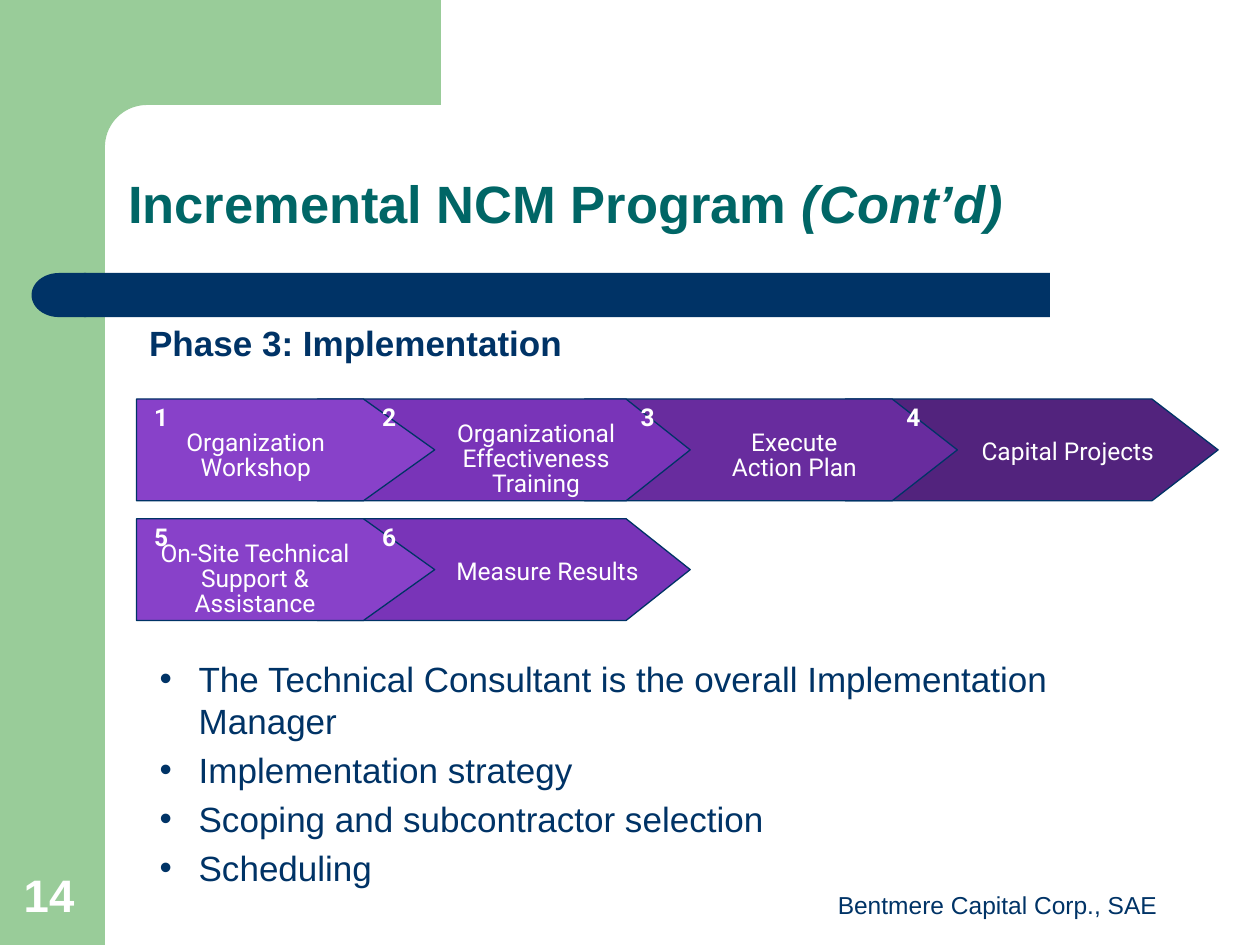
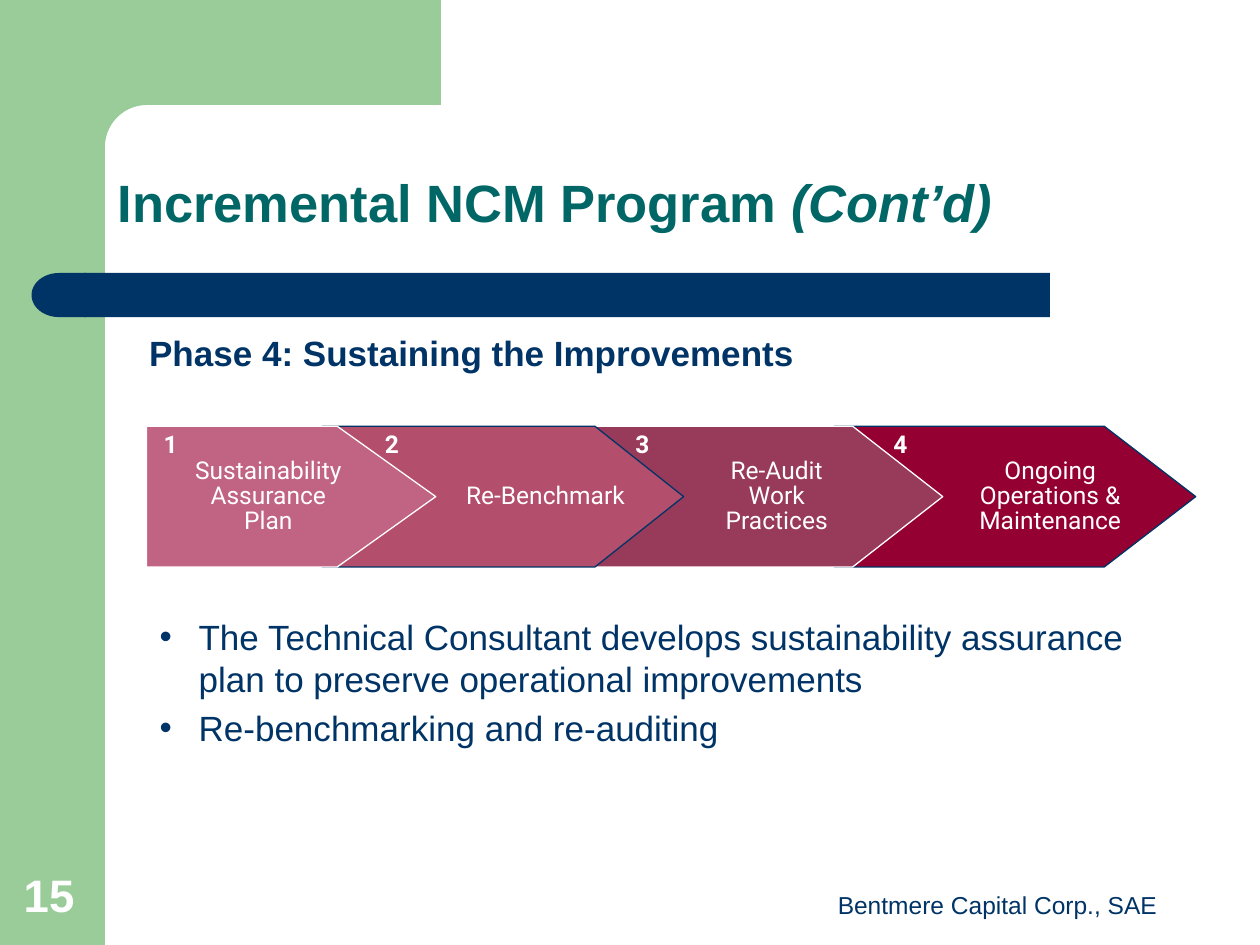
"""Build two programme slides with numbered arrow flows and bullet lists."""
from dataclasses import dataclass
from math import cos, radians, sin

from pptx import Presentation
from pptx.dml.color import RGBColor
from pptx.enum.shapes import MSO_SHAPE
from pptx.enum.text import MSO_ANCHOR, MSO_AUTO_SIZE, PP_ALIGN
from pptx.oxml import parse_xml
from pptx.oxml.ns import nsdecls
from pptx.util import Inches, Pt


@dataclass(frozen=True)
class Theme:
    green: str = "99CC99"
    navy: str = "003366"
    teal: str = "006666"
    white: str = "FFFFFF"
    body_font: str = "Arial"
    flow_font: str = "Roboto"
    title_size: int = 30
    body_size: int = 20
    label_size: int = 14
    number_size: int = 26
    outline: float = 0.75


theme = Theme()
presentation = Presentation()
presentation.slide_width, presentation.slide_height = Inches(10), Inches(7.5)
COLUMN = presentation.slide_width / 120
ROW = presentation.slide_height / 90


def grid(left, top, width, height):
    return [round(value) for value in (left * COLUMN, top * ROW, width * COLUMN, height * ROW)]


def style(shape, color, size, font=theme.body_font, bold=False,
          align=PP_ALIGN.LEFT, anchor=MSO_ANCHOR.TOP, spacing=None):
    text_frame = shape.text_frame
    text_frame.word_wrap = True
    text_frame.auto_size = MSO_AUTO_SIZE.NONE
    text_frame.vertical_anchor = anchor
    for paragraph in text_frame.paragraphs:
        paragraph.alignment = align
        paragraph.line_spacing = spacing
        for run in paragraph.runs:
            run.font.name, run.font.size, run.font.bold = font, Pt(size), bold
            run.font.color.rgb = RGBColor.from_string(color)


FOOTER = "Bentmere Capital Corp., SAE"
ARROW_OFFSETS = [0, 17.24, 42.68, 67.52]
ARROW_WIDTHS = [28.4, 35.5, 35.5, 35.5]
ARROW_POINTS = [0.7, 0.63, 0.64, 0.65]
NUMBER_OFFSETS = [1.68, 23.4, 48, 73.32]
PURPLES = ["8841C9", "7934B8", "682C9E", "52237D"]
REDS = ["C16382", "B34F6D", "983A59", "940031"]

slides = [
    {
        "number": "14",
        "title_box": (11, 12.6, 104.3, 10.4),
        "phase": "Phase 3: Implementation",
        "phase_box": (13, 30, 98.4, 9),
        "list_box": (14, 62, 97.5, 23),
        "bullets": ["The Technical Consultant is the overall Implementation Manager",
                    "Implementation strategy",
                    "Scoping and subcontractor selection",
                    "Scheduling"],
        "left": 13, "scale": 1, "height": 9.7, "line_height": 1.72,
        "fills": PURPLES, "outlines": [theme.navy] * 4,
        "flows": [
            (38, 1, [("Organization\nWorkshop", 24.36, 15.36),
                     ("Organizational\nEffectiveness\nTraining", 51.06, 17.4),
                     ("Execute\nAction Plan", 75.66, 13.56),
                     ("Capital Projects", 101.7, 18.84)]),
            (49.4, 5, [("On-Site Technical\nSupport &\nAssistance", 24.3, 21.24),
                       ("Measure Results", 52.14, 19.8)]),
        ],
    },
    {
        "number": "15",
        "title_box": (10, 13.5, 104.3, 9.4),
        "phase": "Phase 4: Sustaining the Improvements",
        "phase_box": (13, 31, 104.3, 8),
        "list_box": (14, 58, 97.5, 23),
        "bullets": ["The Technical Consultant develops sustainability assurance plan "
                    "to preserve operational improvements",
                    "Re-benchmarking and re-auditing"],
        "left": 13.95, "scale": 0.97, "height": 13.4, "line_height": 2.36,
        "fills": REDS, "outlines": [theme.white, theme.navy] * 2,
        "flows": [
            (40.6, 1, [("Sustainability\nAssurance\nPlan", 25.56, 15.6),
                       ("Re-Benchmark", 51.96, 17.28),
                       ("Re-Audit\nWork\nPractices", 73.98, 10.44),
                       ("Ongoing\nOperations &\nMaintenance", 100.02, 15.48)]),
        ],
    },
]

layout = presentation.slide_layouts.get_by_name("Two Content")
pages = [presentation.slides.add_slide(layout) for content in slides]

shapes = pages[0].shapes
side_band = shapes.add_shape(MSO_SHAPE.RECTANGLE, *grid(0, 0, 10, 90))
corner_points = [(42, 10)]
corner_points += [(14 + 4 * cos(radians(angle)), 14 - 4 * sin(radians(angle)))
                  for angle in range(90, 181, 5)]
corner_points += [(10, 15.36), (6, 15.36), (6, 0)]
builder = shapes.build_freeform(round(42 * COLUMN), 0)
builder.add_line_segments([(x * COLUMN, y * ROW) for x, y in corner_points])
corner = builder.convert_to_shape()
title_bar = shapes.add_shape(MSO_SHAPE.RECTANGLE, *grid(8, 26, 92, 4.2))
bar_end = shapes.add_shape(MSO_SHAPE.FLOWCHART_DELAY, *grid(3, 26, 5.2, 4.2))
bar_end.rotation = 180
decorations = [(side_band, theme.green), (corner, theme.green),
               (title_bar, theme.navy), (bar_end, theme.navy)]
for index, (shape, color) in enumerate(decorations):
    shape.shadow.inherit = False
    shape.fill.solid()
    shape.fill.fore_color.rgb = RGBColor.from_string(color)
    shape.line.fill.background()
    shape.element.nvSpPr.cNvPr.set("id", str(20 + index))
    layout.shapes.element.insert(2 + index, shape.element)

for slide, content in zip(pages, slides):
    title, phase, bullets = slide.placeholders
    for shape, name in ((title, "title_box"), (phase, "phase_box"), (bullets, "list_box")):
        shape.left, shape.top, shape.width, shape.height = grid(*content[name])

    paragraph = title.text_frame.paragraphs[0]
    paragraph.text = "Incremental NCM Program "
    continued = paragraph.add_run()
    continued.text = "(Cont’d)"
    continued.font.italic = True
    style(title, theme.teal, theme.title_size, bold=True, anchor=MSO_ANCHOR.BOTTOM, spacing=0.9)

    phase.text_frame.text = content["phase"]
    style(phase, theme.navy, theme.body_size, bold=True)
    properties = phase.text_frame.paragraphs[0]._p.get_or_add_pPr()
    properties.set("marL", "0")
    properties.set("indent", "0")
    properties.append(parse_xml(f"<a:buNone {nsdecls('a')}/>"))

    bullets.text_frame.text = "\n".join(content["bullets"])
    style(bullets, theme.navy, theme.body_size)
    for paragraph in bullets.text_frame.paragraphs:
        properties = paragraph._p.get_or_add_pPr()
        properties.set("marL", str(Inches(0.31)))
        properties.set("indent", str(-Inches(0.31)))
        properties.append(parse_xml(f"<a:buChar {nsdecls('a')} char='•'/>"))

    left, scale, height = content["left"], content["scale"], content["height"]
    for top, first_number, steps in content["flows"]:
        for index in reversed(range(len(steps))):
            kind = MSO_SHAPE.CHEVRON if index else MSO_SHAPE.PENTAGON
            arrow = slide.shapes.add_shape(kind, *grid(
                left + ARROW_OFFSETS[index] * scale, top, ARROW_WIDTHS[index] * scale, height))
            arrow.adjustments[0] = ARROW_POINTS[index]
            arrow.shadow.inherit = False
            arrow.fill.solid()
            arrow.fill.fore_color.rgb = RGBColor.from_string(content["fills"][index])
            arrow.line.color.rgb = RGBColor.from_string(content["outlines"][index])
            arrow.line.width = Pt(theme.outline)

        for index, (text, center, width) in enumerate(steps):
            label_height = content["line_height"] * len(text.split("\n"))
            label_box = grid(center - width / 2, top + (height - label_height) / 2,
                             width, label_height)
            number_box = grid(left + NUMBER_OFFSETS[index] * scale, top + 0.3,
                              1.8, content["line_height"] * 1.18)
            entries = [(text, label_box, False, PP_ALIGN.CENTER, 0.85),
                       (str(first_number + index), number_box, True, PP_ALIGN.LEFT, None)]
            for words, box, bold, align, spacing in entries:
                label = slide.shapes.add_textbox(*box)
                text_frame = label.text_frame
                text_frame.paragraphs[0].text = words
                style(label, theme.white, theme.label_size, theme.flow_font, bold, align,
                      spacing=spacing)
                text_frame.margin_left = text_frame.margin_right = 0
                text_frame.margin_top = text_frame.margin_bottom = 0
                text_frame.word_wrap = False
                text_frame.auto_size = MSO_AUTO_SIZE.SHAPE_TO_FIT_TEXT

    footer = slide.shapes.add_textbox(*grid(76, 82, 38, 6.2))
    footer.text_frame.text = FOOTER
    style(footer, theme.navy, theme.label_size, align=PP_ALIGN.CENTER, anchor=MSO_ANCHOR.BOTTOM)

    page_number = slide.shapes.add_textbox(*grid(1.08, 82, 7.68, 6.4))
    page_number.text_frame.text = content["number"]
    style(page_number, theme.white, theme.number_size, bold=True, anchor=MSO_ANCHOR.BOTTOM)

presentation.save("out.pptx")
